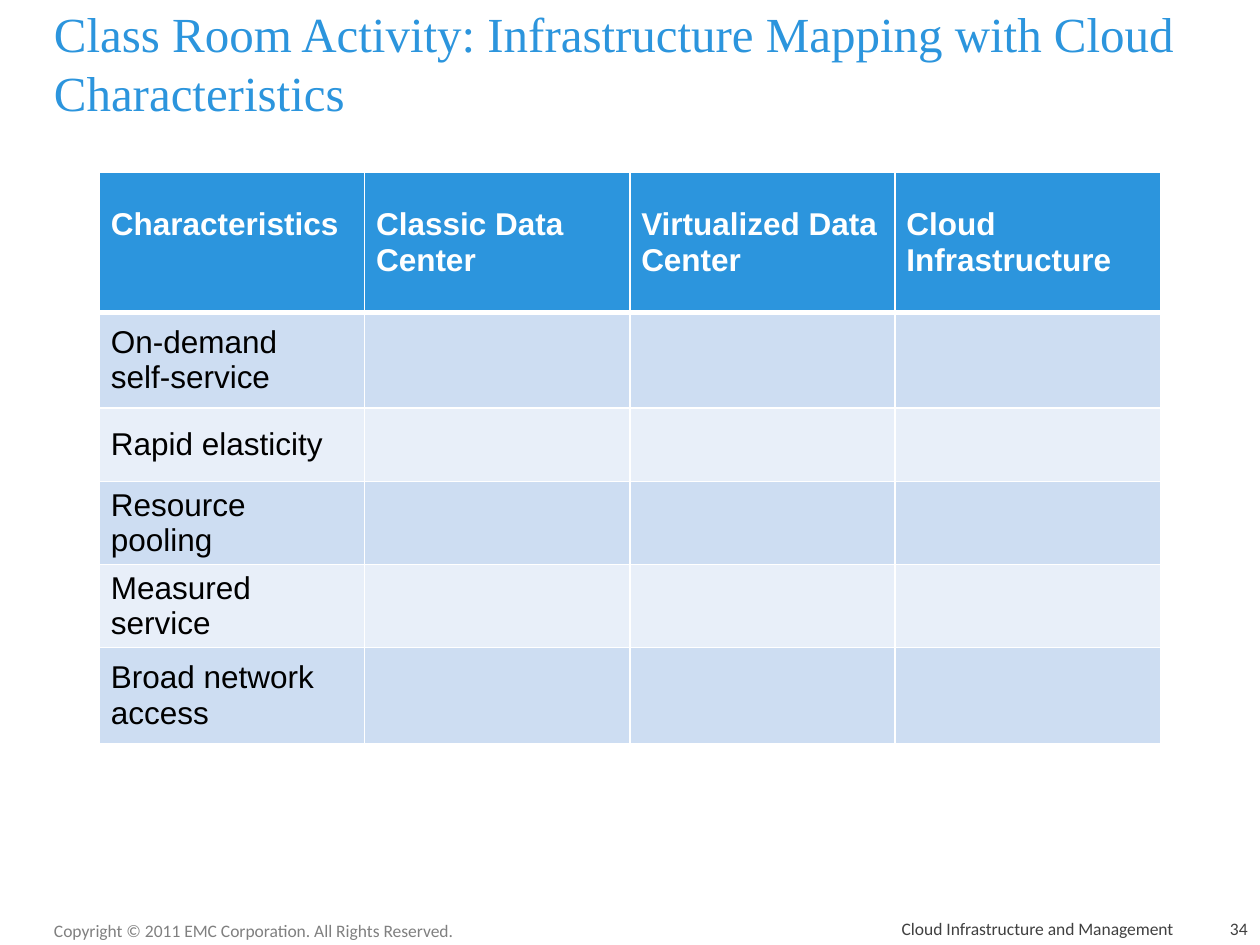
from pptx import Presentation
from pptx.dml.color import RGBColor
from pptx.enum.text import MSO_ANCHOR, PP_ALIGN
from pptx.oxml import parse_xml
from pptx.oxml.ns import nsdecls
from pptx.util import Inches, Pt

TOP, MIDDLE, BOTTOM = MSO_ANCHOR.TOP, MSO_ANCHOR.MIDDLE, MSO_ANCHOR.BOTTOM
LEFT, RIGHT = PP_ALIGN.LEFT, PP_ALIGN.RIGHT

THEME = {
    "blue": "2C95DD", "white": "FFFFFF", "black": "000000",
    "gray": "808080", "dark": "404040", "bands": ("CDDDF2", "E8EFF9"),
    "title_font": "Times New Roman", "table_font": "Arial", "footer_font": "Calibri",
    "title_size": 28, "table_size": 18, "footer_size": 10,
}

TITLE = "Class Room Activity: Infrastructure Mapping with Cloud Characteristics"
FOOTERS = [
    ("Copyright © 2011 EMC Corporation. All Rights Reserved.",
     (0.33, 7.25, 3.42, 0.27), "gray", LEFT, TOP),
    ("Cloud Infrastructure and Management",
     (4.83, 7.25, 4.58, 0.25), "dark", RIGHT, BOTTOM),
    ("34", (9.5, 7.25, 0.5, 0.25), "dark", RIGHT, BOTTOM),
]
HEADERS = ["Characteristics", "Classic Data Center", "Virtualized Data Center",
           "Cloud Infrastructure"]
CHARACTERISTICS = ["On-demand\nself-service", "Rapid elasticity", "Resource pooling",
                   "Measured service", "Broad network access"]
TABLE_BOX = (0.79, 1.37, 8.42, 4.49)
ROW_HEIGHTS = [1.11, 0.76, 0.58, 0.66, 0.66, 0.76]


def write_text(frame, text, *, kind, color, align=LEFT, bold=False):
    for index, line in enumerate(text.split("\n")):
        paragraph = frame.paragraphs[0] if index == 0 else frame.add_paragraph()
        paragraph.alignment = align
        run = paragraph.add_run()
        run.text = line
        run.font.name = THEME[f"{kind}_font"]
        run.font.size = Pt(THEME[f"{kind}_size"])
        run.font.bold = bold
        run.font.color.rgb = RGBColor.from_string(THEME[color])


def add_text_box(slide, text, box, *, anchor, **text_format):
    frame = slide.shapes.add_textbox(*map(Inches, box)).text_frame
    frame.word_wrap = True
    frame.vertical_anchor = anchor
    write_text(frame, text, **text_format)


def style_cell(cell, fill, bottom_width):
    cell.vertical_anchor = MIDDLE
    cell.margin_left = cell.margin_right = Inches(0.09)
    cell.margin_top = cell.margin_bottom = Inches(0.03)
    properties = cell._tc.get_or_add_tcPr()
    for side, width in (("L", 1), ("R", 1), ("T", 1), ("B", bottom_width)):
        properties.append(parse_xml(
            f'<a:ln{side} {nsdecls("a")} w="{Pt(width)}"><a:solidFill>'
            f'<a:srgbClr val="{THEME["white"]}"/></a:solidFill></a:ln{side}>'))
    cell.fill.solid()
    cell.fill.fore_color.rgb = RGBColor.from_string(fill)


def add_mapping_table(slide):
    rows = [HEADERS] + [[name] + [""] * (len(HEADERS) - 1) for name in CHARACTERISTICS]
    table = slide.shapes.add_table(
        len(rows), len(HEADERS), *map(Inches, TABLE_BOX)).table
    for column in table.columns:
        column.width = Inches(TABLE_BOX[2] / len(HEADERS))
    for row_index, (row, height) in enumerate(zip(rows, ROW_HEIGHTS)):
        table.rows[row_index].height = Inches(height)
        header = row_index == 0
        fill = THEME["blue"] if header else THEME["bands"][(row_index - 1) % 2]
        for column_index, text in enumerate(row):
            cell = table.cell(row_index, column_index)
            style_cell(cell, fill, 3 if header else 1)
            if text:
                write_text(cell.text_frame, text, kind="table", bold=header,
                           color="white" if header else "black")
    table.cell(0, 0).margin_bottom = Inches(0.31)


def main():
    presentation = Presentation()
    presentation.slide_width, presentation.slide_height = Inches(10), Inches(7.5)
    slide = presentation.slides.add_slide(presentation.slide_layouts[6])
    add_text_box(slide, TITLE, (0.33, 0.08, 9.25, 0.83),
                 anchor=MIDDLE, kind="title", color="blue")
    for text, box, color, align, anchor in FOOTERS:
        add_text_box(slide, text, box, anchor=anchor, kind="footer",
                     color=color, align=align)
    add_mapping_table(slide)
    presentation.save("out.pptx")


if __name__ == "__main__":
    main()
